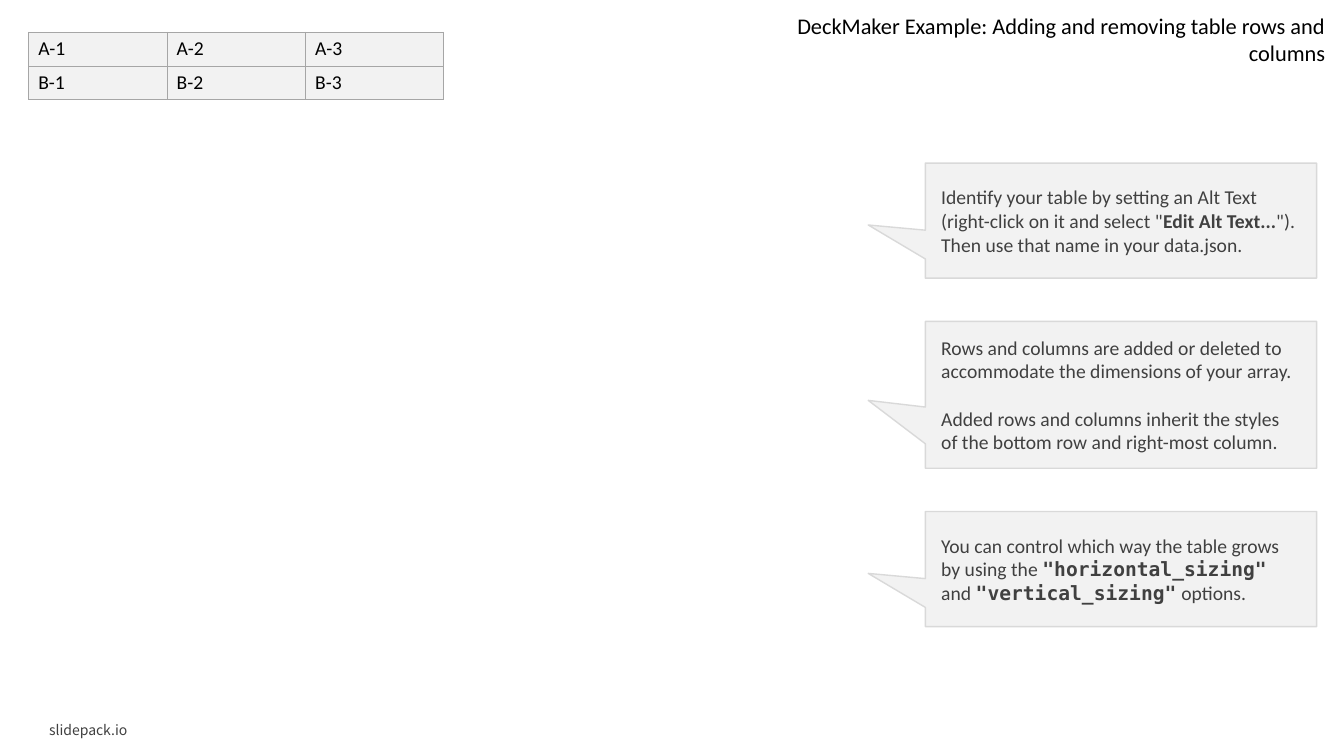
from lxml import etree
from pptx import Presentation
from pptx.dml.color import RGBColor
from pptx.enum.shapes import MSO_SHAPE
from pptx.enum.text import MSO_ANCHOR, MSO_AUTO_SIZE, PP_ALIGN
from pptx.oxml import parse_xml
from pptx.oxml.ns import nsdecls
from pptx.util import Cm, Pt

CALLOUT = MSO_SHAPE.RECTANGULAR_CALLOUT
TOP, MIDDLE = MSO_ANCHOR.TOP, MSO_ANCHOR.MIDDLE
NO_FIT = MSO_AUTO_SIZE.NONE
RIGHT = PP_ALIGN.RIGHT

SANS, MONO, FOOT = "Calibri", "DejaVu Sans Mono", "Noto Sans CJK JP"
BLACK, DARK, PALE, EDGE, GRID = "000000", "404040", "F2F2F2", "D9D9D9", "A6A6A6"

BODY = {"size": Pt(14), "name": SANS, "color": DARK, "bold": False}
BOLD = BODY | {"bold": True}
CODE = BOLD | {"name": MONO}
CELL = BODY | {"color": BLACK}
HEAD = CELL | {"size": Pt(16)}
SITE = BODY | {"size": Pt(10), "name": FOOT}

# Each note: height in cm, space between paragraphs in points, paragraphs of runs
NOTES = [
    (2.9, 0, [
        [("Identify your table by setting an Alt Text (right-click on it and select \"", BODY),
         ("Edit Alt Text...", BOLD), ("\").", BODY)],
        [("Then use that name in your data.json.", BODY)],
    ]),
    (3.7, 17, [
        [("Rows and columns are added or deleted to accommodate "
          "the dimensions of your array.", BODY)],
        [("Added rows and columns inherit the styles of the bottom row "
          "and right-most column.", BODY)],
    ]),
    (2.9, 0, [
        [("You can control which way the table grows by using the ", BODY),
         ("\"horizontal_sizing\"", CODE), (" and ", BODY),
         ("\"vertical_sizing\"", CODE), (" options.", BODY)],
    ]),
]


def rgb(code):
    return RGBColor.from_string(code)


def paint(shape, code):
    shape.fill.solid()
    shape.fill.fore_color.rgb = rgb(code)


def write(para, text, form):
    run = para.add_run()
    run.text = text
    for key, value in form.items():
        if key == "color":
            run.font.color.rgb = rgb(value)
        else:
            setattr(run.font, key, value)


def set_frame(frame, form):
    for key, value in form.items():
        setattr(frame, key, value)


def add_title(slide, left, top, width, height):
    title = slide.shapes.title
    title.left, title.top, title.width, title.height = (
        Cm(left), Cm(top), Cm(width), Cm(height))
    frame = title.text_frame
    set_frame(frame, {"word_wrap": False, "auto_size": NO_FIT, "vertical_anchor": TOP})
    para = frame.paragraphs[0]
    para.alignment = RIGHT
    write(para, "DeckMaker Example: Adding and removing table rows and columns", HEAD)


def add_site(slide, left, top, width, height):
    box = slide.shapes.add_textbox(Cm(left), Cm(top), Cm(width), Cm(height))
    set_frame(box.text_frame, {"word_wrap": True, "vertical_anchor": MIDDLE})
    write(box.text_frame.paragraphs[0], "slidepack.io", SITE)


def add_edges(cell):
    """Draw a thin line on all four sides of a table cell."""
    props = cell._tc.get_or_add_tcPr()
    for spot, side in enumerate("LRTB"):
        line = parse_xml(f'<a:ln{side} {nsdecls("a")} w="{Pt(0.25)}"/>')
        fill = etree.SubElement(line, "{%s}solidFill" % line.nsmap["a"])
        etree.SubElement(fill, "{%s}srgbClr" % line.nsmap["a"], val=GRID)
        props.insert(spot, line)


def add_grid(slide, left, top, width, height, rows="AB", count=3):
    shape = slide.shapes.add_table(
        len(rows), count, Cm(left), Cm(top), Cm(width), Cm(height))
    table = shape.table
    table.first_row = table.horz_banding = False
    for i, row in enumerate(rows):
        for j in range(count):
            cell = table.cell(i, j)
            cell.vertical_anchor = MIDDLE
            paint(cell, PALE)
            add_edges(cell)
            write(cell.text_frame.paragraphs[0], f"{row}-{j + 1}", CELL)


def add_note(slide, left, top, width, height, space, paras):
    note = slide.shapes.add_shape(CALLOUT, Cm(left), Cm(top), Cm(width), Cm(height))
    note.adjustments[0], note.adjustments[1] = -0.646, 0.038
    note.shadow.inherit = False
    paint(note, PALE)
    note.line.color.rgb = rgb(EDGE)
    note.line.width = Pt(1)
    frame = note.text_frame
    sides = ("left", "top", "right", "bottom")
    set_frame(frame, {f"margin_{side}": Cm(0.4) for side in sides})
    set_frame(frame, {"word_wrap": True, "vertical_anchor": MIDDLE})
    for i, runs in enumerate(paras):
        para = frame.add_paragraph() if i else frame.paragraphs[0]
        para.alignment = PP_ALIGN.LEFT
        if i:
            para.space_before = Pt(space)
        for text, form in runs:
            write(para, text, form)


def add_notes(slide, left, top, width, gap):
    for height, space, paras in NOTES:
        add_note(slide, left, top, width, height, space, paras)
        top += height + gap


def main():
    deck = Presentation()
    deck.slide_width, deck.slide_height = Cm(33.87), Cm(19.05)
    slide = deck.slides.add_slide(deck.slide_layouts[5])
    add_site(slide, 0.99, 18.08, 7.4, 0.64)
    add_grid(slide, 0.71, 0.81, 10.47, 1.7)
    add_notes(slide, 23.32, 4.11, 9.86, 1.09)
    add_title(slide, 18.21, 0.18, 15.44, 0.94)
    deck.save("out.pptx")


if __name__ == "__main__":
    main()
